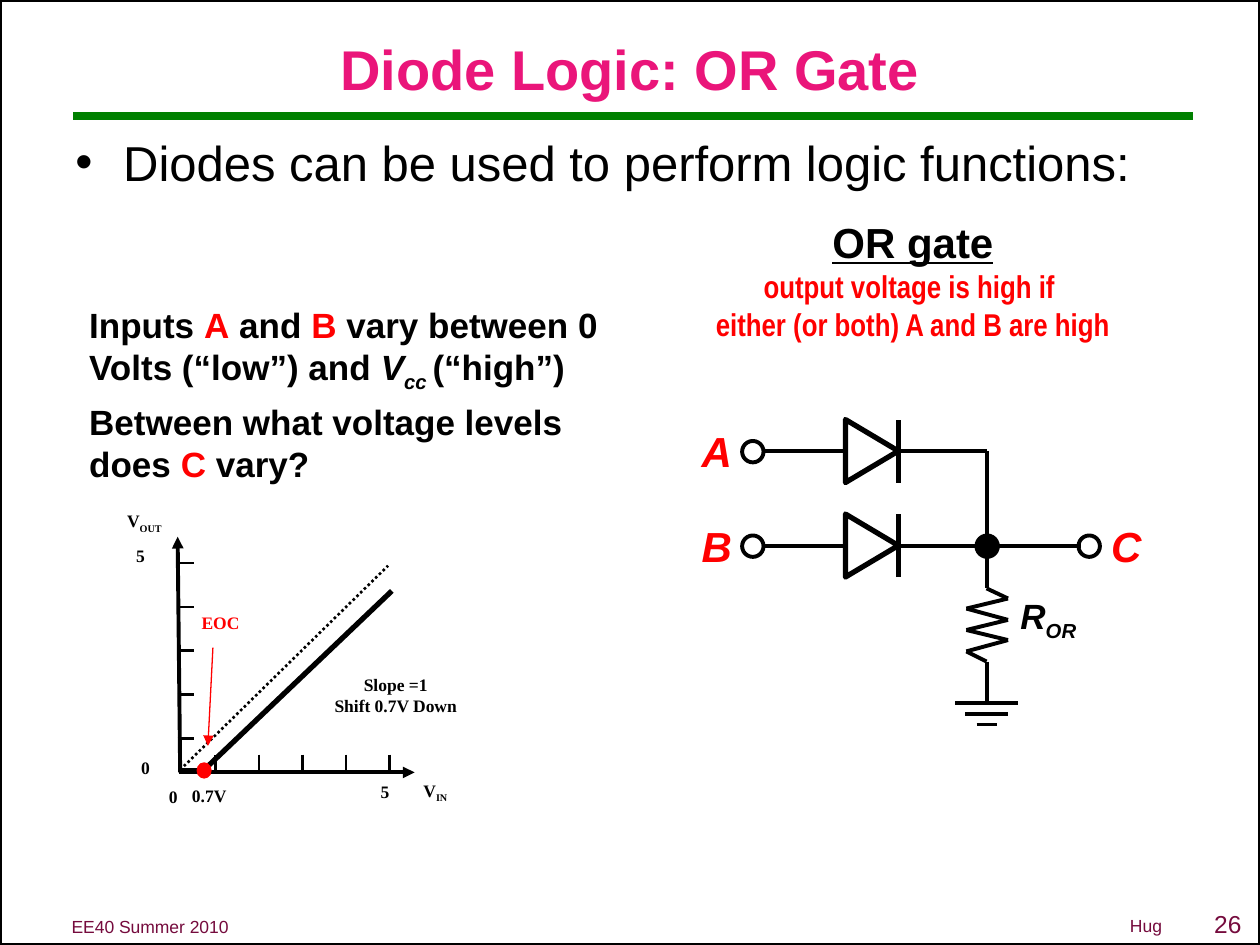
from itertools import pairwise

from lxml import etree
from pptx import Presentation
from pptx import util as u
from pptx.dml.color import RGBColor
from pptx.enum import dml, shapes, text
from pptx.oxml import ns

BLACK, RED, PLUM, PINK, GREEN = "000000", "FF0000", "750B3D", "EA157A", "008000"
SERIF = "Times New Roman"
CENTER = text.PP_ALIGN.CENTER

presentation = Presentation()
presentation.slide_width, presentation.slide_height = u.Inches(10), u.Inches(7.5)
slide = presentation.slides.add_slide(presentation.slide_layouts[6])


def add_line(x1, y1, x2, y2, width=2.25, color=BLACK, arrow=False, dash=None):
    line = slide.shapes.add_connector(
        shapes.MSO_CONNECTOR.STRAIGHT, *[u.Inches(v) for v in (x1, y1, x2, y2)])
    line.line.width = u.Pt(width)
    line.line.color.rgb = RGBColor.from_string(color)
    if dash:
        line.line.dash_style = dash
    if arrow:
        etree.SubElement(line.line._get_or_add_ln(), ns.qn("a:tailEnd"), type="triangle")
    etree.SubElement(line._element.spPr, ns.qn("a:effectLst"))


def add_text(box, paragraphs, size, color=BLACK, font="Arial", align=None,
             bold=True, italic=False, wrap=False, middle=False, space=0):
    """Each paragraph is a list of (words, overrides) runs."""
    shape = slide.shapes.add_textbox(*[u.Inches(v) for v in box])
    frame = shape.text_frame
    frame.word_wrap = wrap
    if middle:
        frame.vertical_anchor = text.MSO_ANCHOR.MIDDLE
    for index, runs in enumerate(paragraphs):
        paragraph = frame.add_paragraph() if index else frame.paragraphs[0]
        paragraph.alignment = align
        if space and (index or len(paragraphs) == 1):
            paragraph.space_before = u.Pt(space)
        for words, style in runs:
            run = paragraph.add_run()
            run.text = words
            run.font.name = style.get("font", font)
            run.font.size = u.Pt(style.get("size", size))
            run.font.bold = bold
            run.font.italic = style.get("italic", italic)
            run.font.underline = style.get("underline", False)
            run.font.color.rgb = RGBColor.from_string(style.get("color", color))
            if style.get("sub"):
                run.font._element.set("baseline", "-25000")
    return shape


# Frame, rule and footer
add_line(0.58, 0.92, 9.47, 0.92, 4.5, GREEN)
add_text((9.49, 7.16, 0.51, 0.34), [[("26", {})]], 14, PLUM,
         align=CENTER, bold=False, wrap=True, middle=True, space=3)
for box, words in [((0.47, 7.22, 1.46, 0.27), "EE40 Summer 2010"),
                   ((8.87, 7.21, 0.46, 0.27), "Hug")]:
    add_text(box, [[(words, {})]], 10, PLUM, bold=False)
border = slide.shapes.add_shape(shapes.MSO_SHAPE.RECTANGLE, 0, 0,
                                presentation.slide_width, presentation.slide_height)
border.shadow.inherit = False
border.fill.background()
border.line.width = u.Pt(2.25)
border.line.color.rgb = RGBColor.from_string(BLACK)

# Title and bullet
add_text((0.5, 0.25, 9, 0.58), [[("Diode Logic: OR Gate", {})]], 32, PINK,
         align=CENTER, wrap=True, middle=True)
body = add_text((0.5, 1, 9, 0.88), [[("Diodes can be used to perform logic functions:", {})]],
                28, bold=False, wrap=True, space=3)
properties = body.text_frame.paragraphs[0]._p.get_or_add_pPr()
properties.set("marL", str(u.Inches(0.38)))
properties.set("indent", str(u.Inches(-0.38)))
etree.SubElement(properties, ns.qn("a:buFont"), typeface="Arial")
etree.SubElement(properties, ns.qn("a:buChar"), char="•")

# Explanations
narrow = {"font": "Arial Narrow", "size": 18, "color": RED}
add_text((5.57, 1.67, 3.35, 1.1),
         [[("OR gate", {"underline": True})],
          [("output voltage is high if ", narrow)],
          [("either (or both) A and B are high", narrow)]], 24, align=CENTER)
red = {"color": RED}
add_text((0.61, 2.36, 4.57, 1.5),
         [[("Inputs ", {}), ("A", red), (" and ", {}), ("B", red),
           (" vary between 0 Volts (“low”) and ", {}), ("V", {"italic": True}),
           ("cc ", {"italic": True, "sub": True}), ("(“high”)", {})],
          [("Between what voltage levels does ", {}), ("C", red), (" vary?", {})]],
         20, wrap=True, space=4)

# Circuit: one diode for each input
for y in (3.58, 4.33):
    add_line(6.05, y, 6.71, y)
    diode = slide.shapes.add_shape(shapes.MSO_SHAPE.ISOSCELES_TRIANGLE, u.Inches(6.67),
                                   u.Inches(y - 0.21), u.Inches(0.5), u.Inches(0.42))
    diode.rotation = 90
    diode.shadow.inherit = False
    diode.fill.background()
    diode.line.width = u.Pt(3)
    diode.line.color.rgb = RGBColor.from_string(BLACK)
    add_line(7.13, y + 0.25, 7.13, y - 0.25, 3)

# Circuit: wires, resistor and ground
add_line(7.13, 3.58, 7.83, 3.58)
add_line(7.83, 3.58, 7.83, 4.33)
add_line(7.13, 4.33, 8.58, 4.33)
resistor = [(7.83, 4.33), (7.83, 4.67), (8, 4.75), (7.67, 4.83), (8, 4.92), (7.67, 5),
            (8, 5.08), (7.67, 5.17), (7.83, 5.25), (7.83, 5.58)]
for start, end in pairwise(resistor):
    add_line(*start, *end)
for y, half in [(5.58, 0.25), (5.67, 0.17), (5.75, 0.08)]:
    add_line(7.83 - half, y, 7.83 + half, y)

# Circuit: terminals, junction and names
for x, y, filled in [(5.89, 3.5, False), (5.89, 4.25, False),
                     (8.56, 4.25, False), (7.75, 4.25, True)]:
    terminal = slide.shapes.add_shape(shapes.MSO_SHAPE.OVAL, u.Inches(x), u.Inches(y),
                                      u.Inches(0.17), u.Inches(0.17))
    terminal.shadow.inherit = False
    terminal.line.width = u.Pt(2.25)
    terminal.line.color.rgb = RGBColor.from_string(BLACK)
    if filled:
        terminal.fill.solid()
        terminal.fill.fore_color.rgb = RGBColor.from_string(BLACK)
    else:
        terminal.fill.background()
for name, x, y in [("A", 5.47, 3.33), ("B", 5.47, 4.08), ("C", 8.72, 4.08)]:
    add_text((x, y, 0.44, 0.5), [[(name, {})]], 24, RED, italic=True)
add_text((8, 4.67, 0.77, 0.43), [[("R", {}), ("OR", {"sub": True})]], 20,
         italic=True, wrap=True)

# Graph: axes and ticks
add_line(1.42, 6.13, 3.29, 6.13, arrow=True)
add_line(1.43, 6.13, 1.41, 4.26, arrow=True)
for step in range(5):
    x, y = 1.71 + 0.345 * step, 5.86 - 0.3475 * step
    add_line(x, 5.99, x, 6.12, 1.5)
    add_line(1.41, y, 1.54, y, 1.5)

# Graph: curves and labels
add_line(1.62, 6.11, 3.11, 4.69, 3)
add_line(1.43, 6.11, 3.08, 4.49, 1.5, dash=dml.MSO_LINE.ROUND_DOT)
add_line(1.42, 6.12, 1.62, 6.12, 3)
sub = {"sub": True}
for box, paragraphs, color in [
    ((0.89, 4, 0.51, 0.27), [[("V", {}), ("OUT", sub)]], BLACK),
    ((3.2, 6.14, 0.51, 0.27), [[("V", {}), ("IN", sub)]], BLACK),
    ((1.12, 6.19, 0.51, 0.27), [[("0", {})]], BLACK),
    ((2.8, 6.15, 0.51, 0.27), [[("5", {})]], BLACK),
    ((0.9, 5.96, 0.51, 0.27), [[("0", {})]], BLACK),
    ((0.86, 4.28, 0.51, 0.27), [[("5", {})]], BLACK),
    ((1.42, 6.18, 0.48, 0.27), [[("0.7V", {})]], BLACK),
    ((2.55, 5.3, 1.18, 0.44), [[("Slope =1", {})], [("Shift 0.7V Down", {})]], BLACK),
    ((1.5, 4.81, 0.5, 0.27), [[("EOC", {})]], RED),
]:
    add_text(box, paragraphs, 10, color, SERIF, CENTER)

# Graph: edge of conduction
add_line(1.69, 5.14, 1.65, 5.92, 0.75, RED, arrow=True)
edge = slide.shapes.add_shape(shapes.MSO_SHAPE.OVAL, u.Inches(1.56), u.Inches(6.05),
                              u.Inches(0.12), u.Inches(0.13))
edge.shadow.inherit = False
edge.fill.solid()
edge.fill.fore_color.rgb = RGBColor.from_string(RED)
edge.line.fill.background()

presentation.save("out.pptx")
